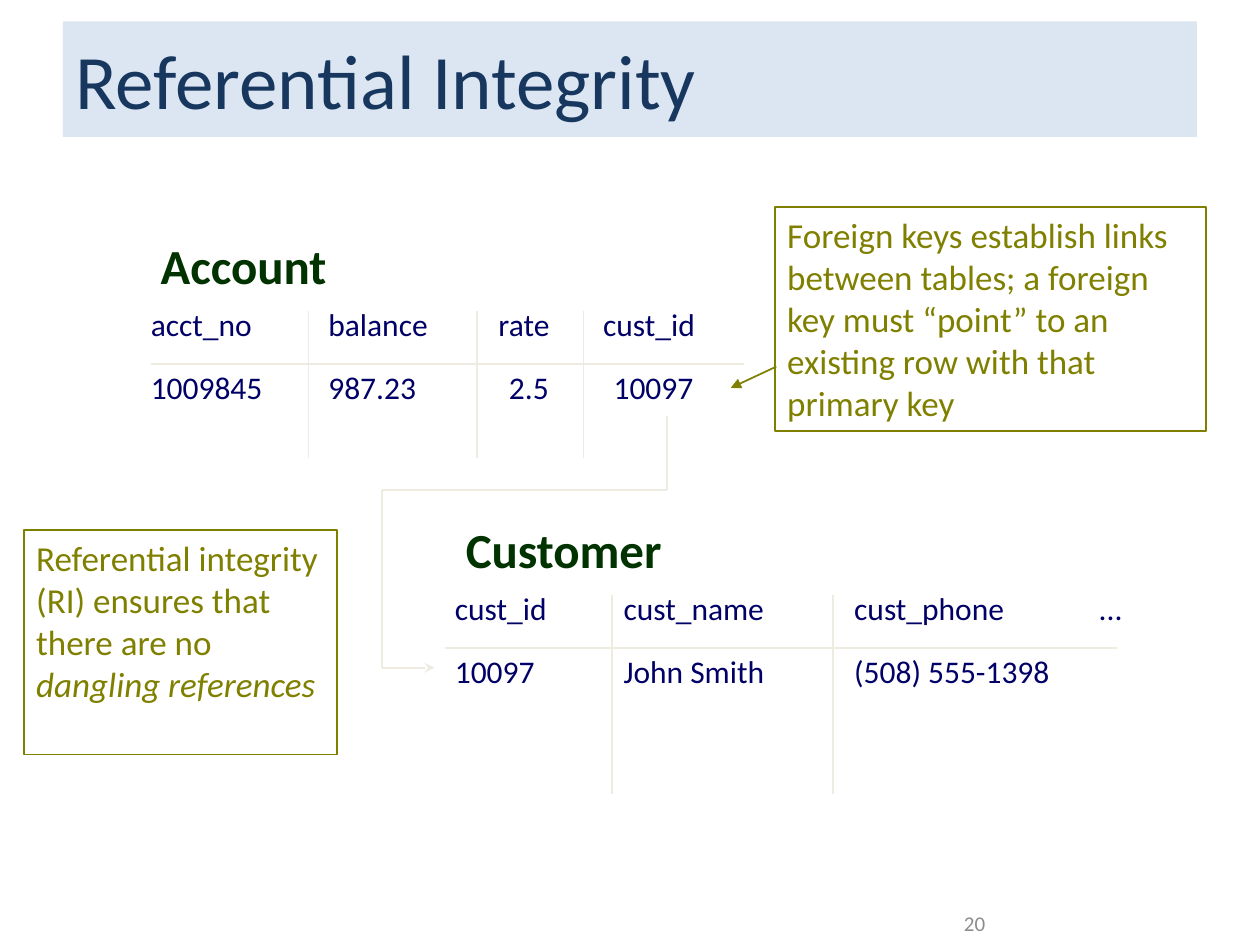
from itertools import pairwise

from lxml import etree
from pptx import Presentation
from pptx.dml.color import RGBColor
from pptx.enum.shapes import MSO_CONNECTOR, MSO_SHAPE
from pptx.enum.text import MSO_ANCHOR, MSO_AUTO_SIZE, PP_ALIGN
from pptx.oxml.ns import qn
from pptx.util import Cm, Pt

STRAIGHT = MSO_CONNECTOR.STRAIGHT
RECT = MSO_SHAPE.RECTANGLE
TOP, MIDDLE = MSO_ANCHOR.TOP, MSO_ANCHOR.MIDDLE
LEFT, RIGHT = PP_ALIGN.LEFT, PP_ALIGN.RIGHT
FIT, NO_FIT = MSO_AUTO_SIZE.SHAPE_TO_FIT_TEXT, MSO_AUTO_SIZE.NONE

NAVY, GREEN, INK = "17375E", "003300", "000066"
OLIVE, RULE, PALE, GREY = "808000", "EEECE1", "DCE6F2", "8C8C8C"


def rgb(value):
    return RGBColor.from_string(value)


def write(sp, runs, size, color, bold=None, align=LEFT, **frame):
    tf = sp.text_frame
    for name, value in frame.items():
        setattr(tf, name, value)
    p = tf.paragraphs[0]
    p.alignment = align
    for text, italic in runs:
        r = p.add_run()
        r.text = text
        font = {"name": "Calibri", "size": Pt(size), "bold": bold, "italic": italic}
        for name, value in font.items():
            setattr(r.font, name, value)
        r.font.color.rgb = rgb(color)


def add_label(s, x, y, w, h, text, size, color, bold=None):
    sp = s.shapes.add_textbox(Cm(x), Cm(y), Cm(w), Cm(h))
    write(sp, [(text, None)], size, color, bold, word_wrap=False, auto_size=FIT)


def add_box(s, x, y, w, h, fill=None, line=None):
    sp = s.shapes.add_shape(RECT, Cm(x), Cm(y), Cm(w), Cm(h))
    sp.shadow.inherit = False
    if fill:
        sp.fill.solid()
        sp.fill.fore_color.rgb = rgb(fill)
    else:
        sp.fill.background()
    if line:
        sp.line.color.rgb = rgb(line)
        sp.line.width = Pt(1)
    else:
        sp.line.fill.background()
    return sp


def add_line(s, start, end, color=RULE, head=None):
    line = s.shapes.add_connector(STRAIGHT, *(Cm(v) for v in (*start, *end)))
    line.line.color.rgb = rgb(color)
    line.line.width = Pt(1)
    if head:
        etree.SubElement(line.line._get_or_add_ln(), qn("a:tailEnd"), type=head)
    etree.SubElement(line._element.spPr, qn("a:effectLst"))


def add_path(s, points, head):
    steps = list(pairwise(points))
    for start, end in steps[:-1]:
        add_line(s, start, end)
    add_line(s, *steps[-1], head=head)


def add_title(s, x, y, w, h, text):
    sp = add_box(s, x, y, w, h, fill=PALE)
    write(sp, [(text, None)], 44, NAVY, word_wrap=True, vertical_anchor=MIDDLE)


def add_entity(s, x, y, name, name_dx, name_w, rule, depth, dividers, columns):
    add_label(s, x + name_dx, y, name_w, 1.45, name, 28, GREEN, True)
    rule_y = y + 2.72
    add_line(s, (x + rule[0], rule_y), (x + rule[1], rule_y))
    for dx in dividers:
        add_line(s, (x + dx, y + 1.65), (x + dx, y + 1.65 + depth))
    for dx, w, header, value, indent in columns:
        add_label(s, x + dx, y + 1.4, w, 1.27, header, 18, INK)
        if value:
            add_label(s, x + dx + indent, y + 2.67, w - indent, 1.27, value, 18, INK)


def add_note(s, x, y, w, h, runs):
    sp = add_box(s, x, y, w, h, line=OLIVE)
    write(sp, runs, 20, OLIVE, word_wrap=True, auto_size=NO_FIT, vertical_anchor=TOP)


def add_page_number(s, x, y, w, h, number):
    sp = s.shapes.add_textbox(Cm(x), Cm(y), Cm(w), Cm(h))
    write(sp, [(number, None)], 12, GREY, align=RIGHT, word_wrap=True,
          vertical_anchor=MIDDLE)


def main():
    prs = Presentation()
    prs.slide_width, prs.slide_height = Cm(25.4), Cm(19.05)
    s = prs.slides.add_slide(prs.slide_layouts[6])

    add_title(s, 1.27, 0.43, 22.86, 2.33, "Referential Integrity")
    add_entity(s, 2.79, 4.62, "Account", 0.2, 4.24, (0.25, 12.2), 2.97,
               (3.43, 6.83, 8.97),
               [(0, 3.4, "acct_no", "1009845", 0),
                (3.58, 3.1, "balance", "987.23", 0),
                (7.01, 1.95, "rate", "2.5", 0.21),
                (9.12, 3.2, "cust_id", "10097", 0.21)])
    add_entity(s, 8.92, 10.34, "Customer", 0.22, 4.9, (0.05, 13.59), 4.01,
               (3.42, 7.87),
               [(0, 3.2, "cust_id", "10097", 0),
                (3.4, 4.6, "cust_name", "John Smith", 0),
                (8.05, 5.3, "cust_phone", "(508) 555-1398", 0),
                (12.98, 1.14, "...", None, 0)])
    add_path(s, [(13.44, 8.38), (13.44, 9.88), (7.7, 9.88), (7.7, 13.46),
                 (8.76, 13.46)], "stealth")
    add_note(s, 0.48, 10.69, 6.32, 4.52,
             [("Referential integrity (RI) ensures that there are no ", None),
              ("dangling references", True)])
    add_note(s, 15.62, 4.17, 8.69, 4.52,
             [("Foreign keys establish links between tables; a foreign key must "
               "“point” to an existing row with that primary key", None)])
    add_line(s, (15.65, 7.39), (14.73, 7.82), OLIVE, "triangle")
    add_page_number(s, 18.21, 18.21, 1.9, 0.79, "20")

    prs.save("out.pptx")


if __name__ == "__main__":
    main()
